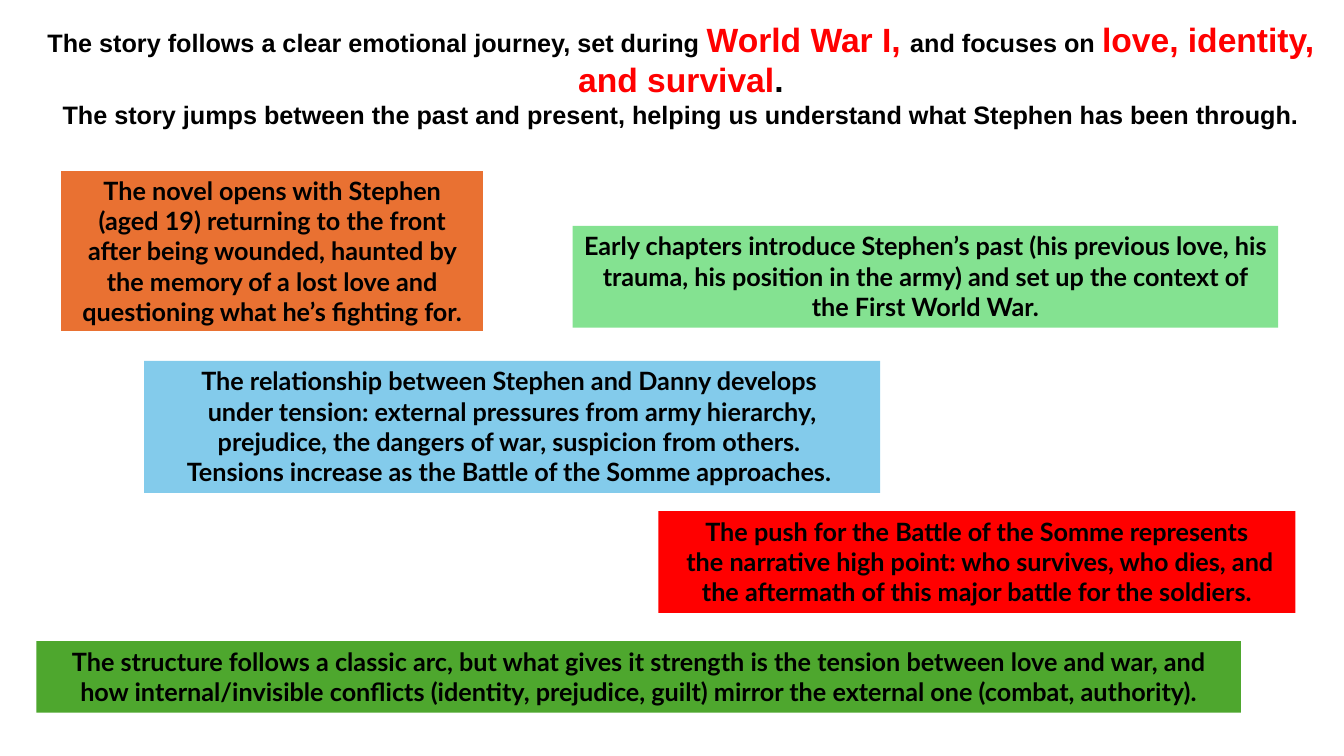
from dataclasses import dataclass

from pptx import Presentation
from pptx.dml.color import RGBColor
from pptx.enum.text import MSO_ANCHOR, MSO_AUTO_SIZE, PP_ALIGN
from pptx.util import Inches, Pt


@dataclass(frozen=True)
class Theme:
    heading_font: str = "Arial"
    body_font: str = "Lato"
    body_size: int = 18
    accent_size: int = 24
    ink: str = "000000"
    red: str = "FF0000"
    orange: str = "E97132"
    mint: str = "84E291"
    sky: str = "83CBEB"
    green: str = "4EA72E"


theme = Theme()
deck = Presentation()
deck.slide_width, deck.slide_height = Inches(13.33), Inches(7.5)
slide = deck.slides.add_slide(deck.slide_layouts[5])


def place(left, top, width, height):
    """Turn percentages of the slide's size into lengths."""
    across, down = deck.slide_width / 100, deck.slide_height / 100
    return [round(part) for part in
            (left * across, top * down, width * across, height * down)]


def write(frame, paragraphs, font_name):
    """Fill a frame with centred bold paragraphs of (text, size, colour) spans."""
    for index, spans in enumerate(paragraphs):
        para = frame.add_paragraph() if index else frame.paragraphs[0]
        para.alignment = PP_ALIGN.CENTER
        for text, size, colour in spans:
            span = para.add_run()
            span.text = text
            font_format = {"name": font_name, "size": Pt(size), "bold": True}
            for attribute, value in font_format.items():
                setattr(span.font, attribute, value)
            span.font.color.rgb = RGBColor.from_string(colour)


# Heading
plain = (theme.body_size, theme.ink)
accent = (theme.accent_size, theme.red)
heading = [
    [("The story follows a clear emotional journey, set during ", *plain),
     ("World War I, ", *accent),
     ("and focuses on ", *plain),
     ("love, identity, and survival", *accent),
     (".", theme.accent_size, theme.ink)],
    [("The story jumps between the past and present, helping us understand "
      "what Stephen has been through.", *plain)],
]
title = slide.shapes.title
title.left, title.top, title.width, title.height = place(1.35, 1.73, 98.63, 16.13)
title_format = {"word_wrap": True, "auto_size": MSO_AUTO_SIZE.NONE,
                "vertical_anchor": MSO_ANCHOR.MIDDLE}
for attribute, value in title_format.items():
    setattr(title.text_frame, attribute, value)
write(title.text_frame, heading, theme.heading_font)

# Opening of the novel
opening = ("The novel opens with Stephen (aged 19) returning to the front after "
           "being wounded, haunted by the memory of a lost love and questioning "
           "what he’s fighting for.")
table = slide.shapes.add_table(1, 1, *place(4.5, 22.53, 31.5, 21.33)).table
table.first_row = table.horz_banding = False
cell = table.cell(0, 0)
cell.vertical_anchor = MSO_ANCHOR.MIDDLE
cell.fill.solid()
cell.fill.fore_color.rgb = RGBColor.from_string(theme.orange)
write(cell.text_frame, [[(opening, *plain)]], theme.body_font)

# Later stages of the story
stages = [
    ((42.6, 29.87, 52.5, 13.47), theme.mint,
     ["Early chapters introduce Stephen’s past (his previous love, his trauma, "
      "his position in the army) and set up the context of the First World War."]),
    ((10.73, 47.73, 54.75, 17.47), theme.sky,
     ["The relationship between Stephen and Danny develops ",
      "under tension: external pressures from army hierarchy, prejudice, "
      "the dangers of war, suspicion from others. ",
      "Tensions increase as the Battle of the Somme approaches. "]),
    ((48.98, 67.6, 47.4, 13.47), theme.red,
     ["The push for the Battle of the Somme represents",
      " the narrative high point: who survives, who dies, and the aftermath "
      "of this major battle for the soldiers."]),
    ((2.7, 84.8, 89.63, 9.47), theme.green,
     ["The structure follows a classic arc, but what gives it strength is the "
      "tension between love and war, and how internal/invisible conflicts "
      "(identity, prejudice, guilt) mirror the external one (combat, authority)."]),
]
for area, colour, texts in stages:
    box = slide.shapes.add_textbox(*place(*area))
    box.fill.solid()
    box.fill.fore_color.rgb = RGBColor.from_string(colour)
    box.text_frame.word_wrap = True
    box.text_frame.auto_size = MSO_AUTO_SIZE.SHAPE_TO_FIT_TEXT
    write(box.text_frame, [[(text, *plain)] for text in texts], theme.body_font)

deck.save("out.pptx")
